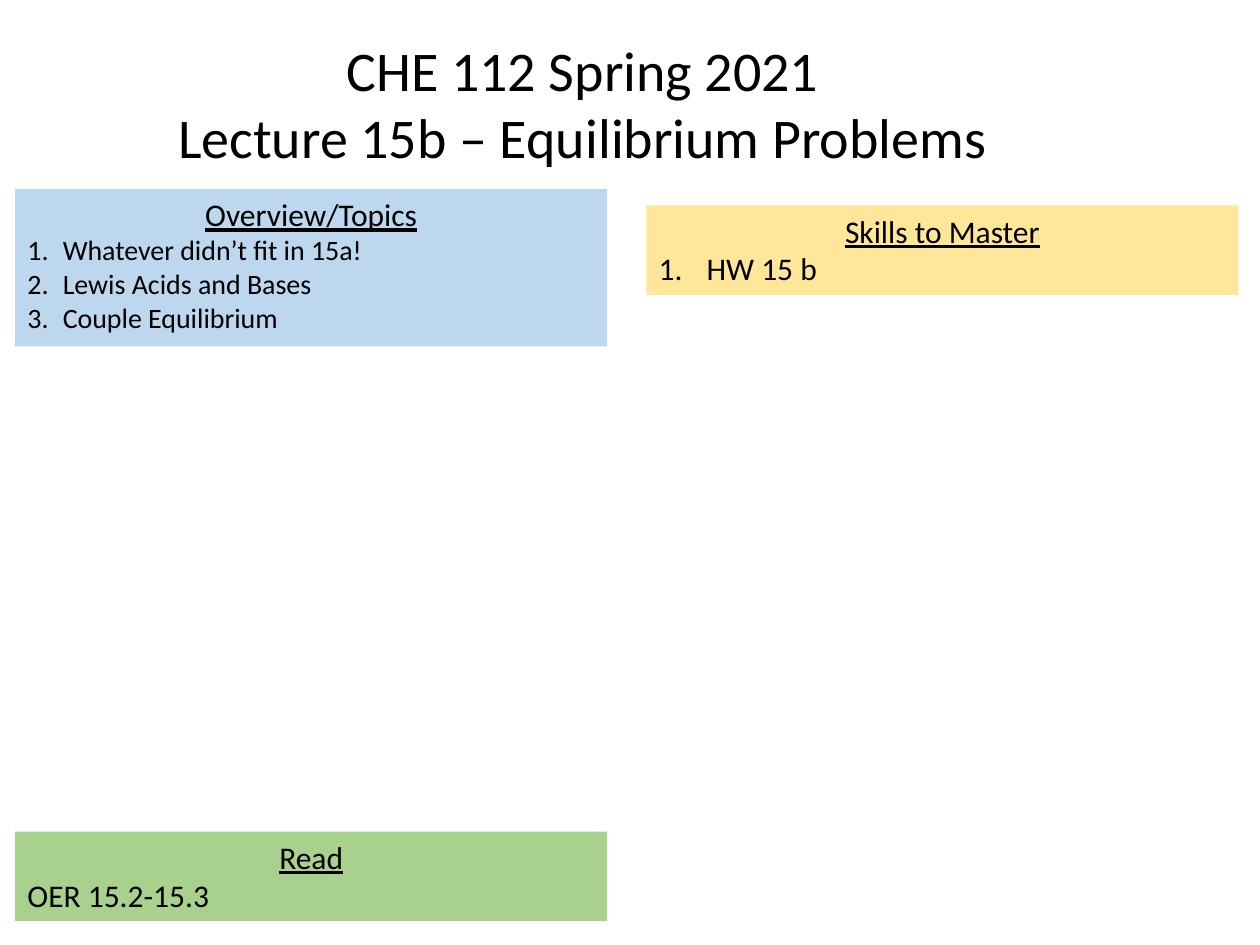
from lxml import etree
from pptx import Presentation
from pptx import util as u
from pptx.dml.color import RGBColor
from pptx.enum import text
from pptx.oxml.ns import qn

BLACK = RGBColor(0x00, 0x00, 0x00)
BLUE = RGBColor(0xBD, 0xD7, 0xEE)
YELLOW = RGBColor(0xFF, 0xE6, 0x99)
GREEN = RGBColor(0xA9, 0xD1, 0x8E)
FONT = "Calibri"

# Two columns of equal width
PANEL_WIDTH = 4.7
LEFT_COLUMN, RIGHT_COLUMN = 0.12, 5.13


def add_line(frame, index, words, size, centred=False, underline=False):
    para = frame.paragraphs[0] if index == 0 else frame.add_paragraph()
    para.alignment = text.PP_ALIGN.CENTER if centred else text.PP_ALIGN.LEFT
    span = para.add_run()
    span.text = words
    span.font.name = FONT
    span.font.size = u.Pt(size)
    span.font.color.rgb = BLACK
    span.font.underline = underline
    return para


def number_line(para, indent):
    """Give a paragraph an automatic number with a hanging indent."""
    props = para._p.get_or_add_pPr()
    props.set("marL", str(u.Inches(indent)))
    props.set("indent", str(-u.Inches(indent)))
    etree.SubElement(props, qn("a:buFont"), typeface="+mj-lt")
    etree.SubElement(props, qn("a:buAutoNum"), type="arabicPeriod")


def add_text_box(page, area, wrap):
    box = page.shapes.add_textbox(*(u.Inches(length) for length in area))
    box.text_frame.word_wrap = wrap
    box.text_frame.auto_size = text.MSO_AUTO_SIZE.SHAPE_TO_FIT_TEXT
    return box


def add_title(page, area, lines):
    frame = add_text_box(page, area, wrap=False).text_frame
    for index, words in enumerate(lines):
        add_line(frame, index, words, 32, centred=True)


def add_panel(page, area, colour, heading, lines, size=18, indent=None):
    box = add_text_box(page, area, wrap=True)
    box.fill.solid()
    box.fill.fore_color.rgb = colour
    add_line(box.text_frame, 0, heading, 18, centred=True, underline=True)
    for index, words in enumerate(lines, 1):
        para = add_line(box.text_frame, index, words, size)
        if indent:
            number_line(para, indent)


def main():
    deck = Presentation()
    deck.slide_width, deck.slide_height = u.Inches(10), u.Inches(7.5)
    page = deck.slides.add_slide(deck.slide_layouts[6])

    # Lecture panels
    add_panel(page, (LEFT_COLUMN, 1.5, PANEL_WIDTH, 1.25), BLUE, "Overview/Topics",
              ["Whatever didn’t fit in 15a!", "Lewis Acids and Bases", "Couple Equilibrium"],
              size=16, indent=0.28)
    add_panel(page, (RIGHT_COLUMN, 1.63, PANEL_WIDTH, 0.71), YELLOW, "Skills to Master",
              ["HW 15 b"], indent=0.38)
    add_panel(page, (LEFT_COLUMN, 6.6, PANEL_WIDTH, 0.71), GREEN, "Read", ["OER 15.2-15.3"])

    # Course title
    add_title(page, (1.28, 0.23, 6.69, 1.18),
              ["CHE 112 Spring 2021", "Lecture 15b – Equilibrium Problems"])

    deck.save("out.pptx")


if __name__ == "__main__":
    main()
